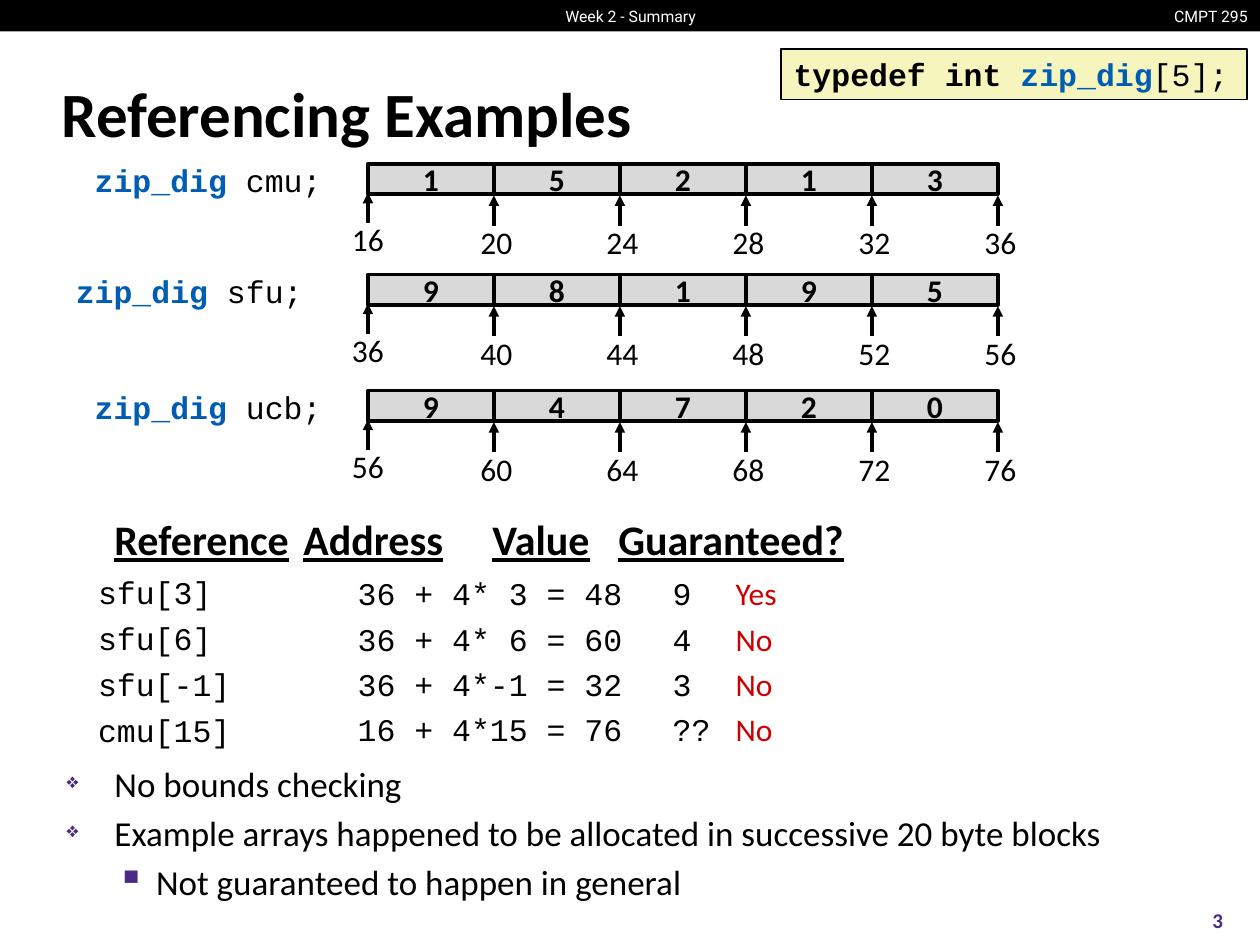
from lxml import etree
from pptx import Presentation
from pptx import util as u
from pptx.dml.color import RGBColor
from pptx.enum import shapes, text
from pptx.oxml import ns

ALIGN = {"l": text.PP_ALIGN.LEFT, "c": text.PP_ALIGN.CENTER, "r": text.PP_ALIGN.RIGHT}
BLUE, RED, PURPLE = "015DB3", "CC0000", "4B2A85"
MONO = "Courier New"
ROWS = [
    ("cmu;", 1.3, 16, "15213"),
    ("sfu; ", 2.18, 36, "98195"),
    ("ucb;", 3.1, 56, "94720"),
]
REFS = [
    ("sfu[3]", "36 + 4* 3 = 48", "9", "Yes"),
    ("sfu[6]", "36 + 4* 6 = 60", "4", "No"),
    ("sfu[-1]", "36 + 4*-1 = 32", "3", "No"),
    ("cmu[15]", "16 + 4*15 = 76", "??", "No"),
]


def color(code):
    """Turn a hex string into a colour."""
    return RGBColor.from_string(code)


def child(node, tag, **attrs):
    """Append a DrawingML element to a node."""
    item = etree.SubElement(node, ns.qn("a:" + tag))
    for key, val in attrs.items():
        item.set(key, str(val))
    return item


def box(slide, x, y, w, h, middle=False):
    """Add a wrapping text box and return its text frame."""
    frame = slide.shapes.add_textbox(*map(u.Inches, (x, y, w, h))).text_frame
    frame.word_wrap = True
    if middle:
        frame.vertical_anchor = text.MSO_ANCHOR.MIDDLE
    return frame


def rect(slide, x, y, w, h, fill, line=0):
    """Add a filled rectangle and return its text frame."""
    shape = slide.shapes.add_shape(
        shapes.MSO_SHAPE.RECTANGLE, *map(u.Inches, (x, y, w, h)))
    shape.shadow.inherit = False
    shape.fill.solid()
    shape.fill.fore_color.rgb = color(fill)
    if line:
        shape.line.color.rgb = color("000000")
        shape.line.width = u.Pt(line)
    else:
        shape.line.fill.background()
    return shape.text_frame


def arrow(slide, x, low, high):
    """Draw an upward arrow."""
    line = slide.shapes.add_connector(
        shapes.MSO_CONNECTOR.STRAIGHT, *map(u.Inches, (x, low, x, high)))
    line.line.color.rgb = color("000000")
    line.line.width = u.Pt(2)
    child(line.line._get_or_add_ln(), "tailEnd", type="triangle")
    child(line._element.spPr, "effectLst")


def write(frame, words, size=18, font="Calibri", ink="000000", bold=False,
          under=False, align="l"):
    """Add a paragraph of plain words or (words, format) runs."""
    para = frame.paragraphs[0]
    if para.runs:
        para = frame.add_paragraph()
    para.alignment = ALIGN[align]
    base = dict(size=size, font=font, ink=ink, bold=bold, under=under)
    for part, change in [(words, {})] if isinstance(words, str) else words:
        look = {**base, **change}
        run = para.add_run()
        run.text = part
        run.font.size = u.Pt(look["size"])
        run.font.name = look["font"]
        run.font.bold = look["bold"]
        run.font.underline = look["under"]
        run.font.color.rgb = color(look["ink"])
    return para


def space(para, left=0, first=0, before=0, mark=None, scale=100, tabs=()):
    """Set a paragraph's indents, gap, bullet and tab stops."""
    para.space_before = u.Pt(before)
    props = para._p.get_or_add_pPr()
    props.set("marL", str(u.Inches(left)))
    props.set("indent", str(u.Inches(first)))
    if mark:
        child(child(props, "buClr"), "srgbClr", val=PURPLE)
        child(props, "buSzPct", val=scale * 1000)
        child(props, "buChar", char=mark)
    if tabs:
        stops = child(props, "tabLst")
        for stop in tabs:
            child(stops, "tab", pos=u.Inches(stop), algn="l")


def header(slide):
    """Draw the top bar, title and page number."""
    rect(slide, 0, 0, 10, 0.25, "000000")
    look = dict(size=9, font="Roboto", ink="FFFFFF")
    write(box(slide, 9.19, 0, 0.81, 0.25, True), "CMPT 295", align="r", **look)
    write(box(slide, 4.3, 0, 1.41, 0.25, True), "Week 2 - Summary", align="c", **look)
    write(box(slide, 0.39, 0.48, 9.19, 0.83, True), "Referencing Examples",
          size=36, bold=True)
    write(box(slide, 9.33, 7.1, 0.67, 0.4, True), "3", size=12, ink=PURPLE,
          bold=True, align="c")


def array(slide, name, top, start, digits):
    """Draw one array with its cells, addresses and declaration."""
    for i, digit in enumerate(digits):
        cell = rect(slide, 2.92 + i, top, 1, 0.24, "D9D9D9", 2)
        cell.margin_top = cell.margin_bottom = 0
        cell.vertical_anchor = text.MSO_ANCHOR.MIDDLE
        cell.word_wrap = False
        write(cell, digit, bold=True, align="c")
    for i in range(len(digits) + 1):
        drop = 0.02 if i else 0
        wide = 1.08 if i else 0.73
        arrow(slide, 2.92 + i, top + 0.47 + drop, top + 0.23 + drop)
        label = box(slide, 2.92 + i + drop - wide / 2, top + 0.4 + drop, wide, 0.4)
        write(label, str(start + 4 * i), align="c")
    write(box(slide, 0.21, top - 0.07, 2.44, 0.4),
          [("zip_dig ", dict(ink=BLUE, bold=True)), (name, {})],
          font=MONO, align="r")


def lookup(slide):
    """Write the reference table as tabbed text."""
    names = box(slide, 0.31, 4.03, 9.09, 3.3)
    heads = []
    for head in ("Reference", "Address", "Value", "Guaranteed?"):
        heads += [("\t", {}), (head, dict(under=True))]
    space(write(names, heads, size=24, bold=True), before=1,
          tabs=(0.38, 2.44, 5.19, 6.65))
    sums = box(slide, 2.74, 4.45, 6.46, 1.54)
    for ref, calc, value, sure in REFS:
        space(write(names, ref, font=MONO), 0.61, -0.24, 4.8)
        para = write(sums, [(f"{calc}\t{value}\t", dict(font=MONO)),
                            (sure, dict(ink=RED))])
        para.line_spacing = 1.2
        space(para, tabs=(2.81, 4.26))


def notes(slide):
    """Write the closing bullets."""
    frame = box(slide, 0.43, 6, 9.15, 1.3)
    for line in ("No bounds checking",
                 "Example arrays happened to be allocated in successive 20 byte blocks"):
        space(write(frame, line, size=20), 0.38, -0.38, 4, "❖", 60)
    last = write(frame, "Not guaranteed to happen in general", size=20)
    last.level = 1
    space(last, 0.71, -0.31, 4, "▪", 110)


def main():
    """Build and save the slide."""
    deck = Presentation()
    deck.slide_width, deck.slide_height = u.Inches(10), u.Inches(7.5)
    slide = deck.slides.add_slide(deck.slide_layouts[6])
    header(slide)
    for row in ROWS:
        array(slide, *row)
    lookup(slide)
    code = rect(slide, 6.2, 0.39, 3.7, 0.4, "F6F5BD", 1)
    write(code, [("typedef int ", dict(bold=True)),
                 ("zip_dig", dict(bold=True, ink=BLUE)), ("[5];", {})], font=MONO)
    notes(slide)
    deck.save("out.pptx")


if __name__ == "__main__":
    main()
